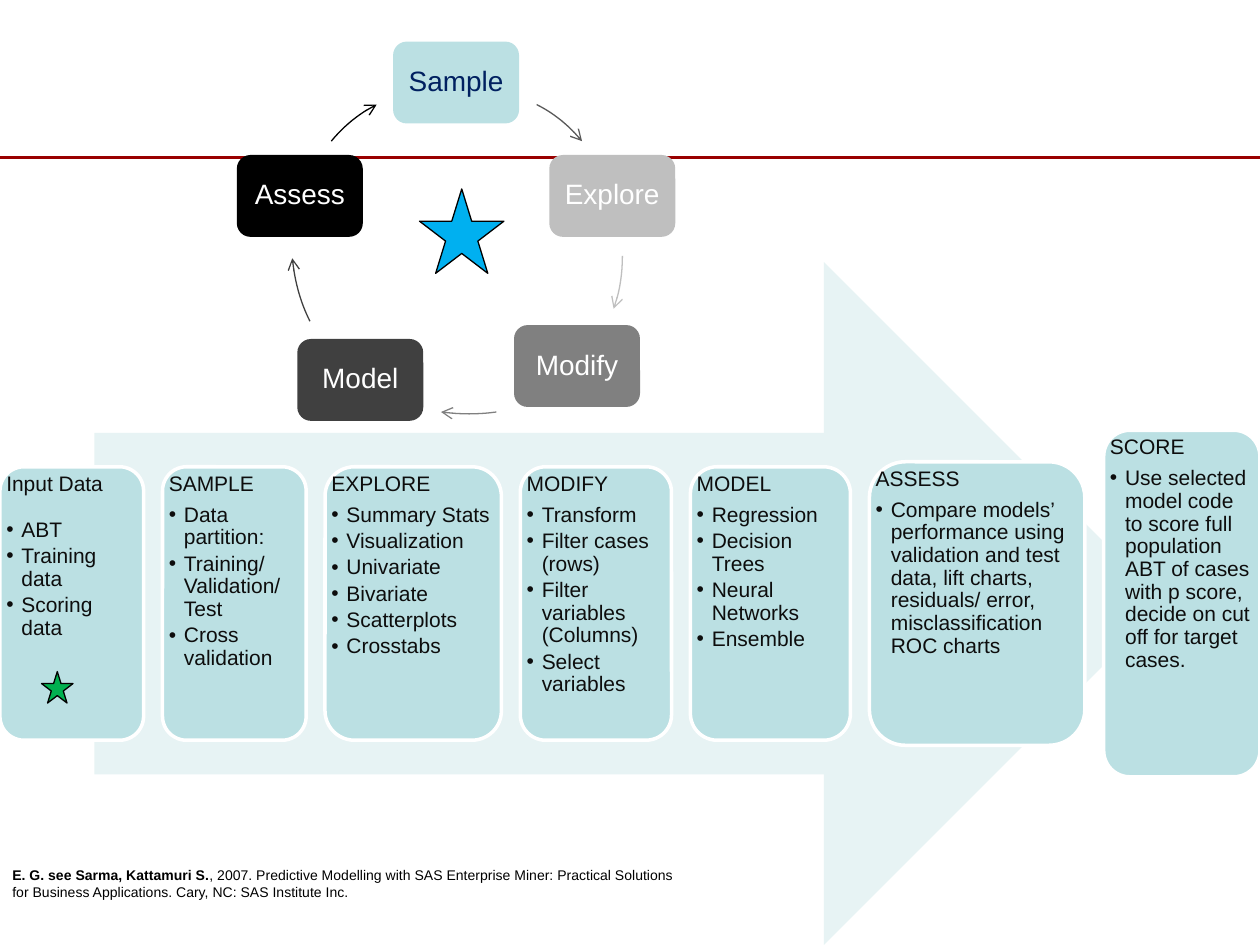
from lxml.etree import SubElement
from pptx import Presentation
from pptx.dml.color import RGBColor
from pptx.enum.shapes import MSO_CONNECTOR, MSO_SHAPE
from pptx.enum.text import MSO_ANCHOR, PP_ALIGN
from pptx.oxml.ns import qn
from pptx.util import Inches, Pt

BLACK = RGBColor(0x00, 0x00, 0x00)
WHITE = RGBColor(0xFF, 0xFF, 0xFF)
INK = RGBColor(0x0D, 0x0D, 0x0D)
NAVY = RGBColor(0x00, 0x20, 0x60)
TEAL = RGBColor(0xBB, 0xE0, 0xE3)
PALE_TEAL = RGBColor(0xE7, 0xF3, 0xF4)
RED = RGBColor(0x99, 0x00, 0x00)
BLUE = RGBColor(0x00, 0xB0, 0xF0)
GREEN = RGBColor(0x00, 0xB0, 0x50)
SLATE = RGBColor(0x59, 0x59, 0x59)
LIGHT_GRAY = RGBColor(0xBF, 0xBF, 0xBF)
MID_GRAY = RGBColor(0x80, 0x80, 0x80)
DARK_GRAY = RGBColor(0x40, 0x40, 0x40)
FONT = "Arial"

# Process stages: heading, width, height, bullets
STAGES = [
    ("Input Data", 1.14, 2.17, ["ABT", "Training data", "Scoring data"]),
    ("SAMPLE", 1.14, 2.17,
     ["Data partition:", "Training/ Validation/ Test", "Cross validation"]),
    ("EXPLORE", 1.40, 2.17,
     ["Summary Stats", "Visualization", "Univariate", "Bivariate",
      "Scatterplots", "Crosstabs"]),
    ("MODIFY", 1.20, 2.17,
     ["Transform", "Filter cases (rows)", "Filter variables (Columns)",
      "Select variables"]),
    ("MODEL", 1.27, 2.17,
     ["Regression", "Decision Trees", "Neural Networks", "Ensemble"]),
    ("ASSESS", 1.71, 2.25,
     ["Compare models’ performance using validation and test data, lift "
      "charts, residuals/ error, misclassification ROC charts"]),
    ("SCORE", 1.24, 2.75,
     ["Use selected model code to score full population ABT of cases with "
      "p score, decide on cut off for target cases."]),
]
STAGE_GAP = 0.15
STAGE_MIDDLE = 4.79

# Cycle steps: label, left, top, fill, text colour
CYCLE = [
    ("Sample", 3.12, 0.33, TEAL, NAVY),
    ("Explore", 4.36, 1.23, LIGHT_GRAY, WHITE),
    ("Modify", 4.08, 2.58, MID_GRAY, WHITE),
    ("Model", 2.36, 2.69, DARK_GRAY, WHITE),
    ("Assess", 1.88, 1.23, BLACK, WHITE),
]
# Curved arrows: start, two control points, end; then colour
CYCLE_ARROWS = [
    ([(4.26, 0.83), (4.40, 0.90), (4.52, 1.00), (4.62, 1.12)], SLATE),
    ([(4.94, 2.03), (4.94, 2.17), (4.92, 2.32), (4.87, 2.45)], LIGHT_GRAY),
    ([(3.94, 3.27), (3.80, 3.29), (3.65, 3.29), (3.50, 3.27)], MID_GRAY),
    ([(2.46, 2.55), (2.38, 2.39), (2.34, 2.23), (2.32, 2.05)], DARK_GRAY),
    ([(2.63, 1.12), (2.73, 1.00), (2.85, 0.90), (2.99, 0.83)], BLACK),
]
CURVE_STEPS = 12

# Stars: left, top, size, fill
STARS = [(3.33, 1.50, 0.67, BLUE), (0.33, 5.33, 0.25, GREEN)]

CITATION = [
    ("E. G. see Sarma, Kattamuri S.", True),
    (", 2007. Predictive Modelling with SAS Enterprise Miner: Practical "
     "Solutions for Business Applications. Cary, NC: SAS Institute Inc.", False),
]

prs = Presentation()
prs.slide_width, prs.slide_height = Inches(10), Inches(7.5)
slide = prs.slides.add_slide(prs.slide_layouts[6])
shapes = slide.shapes


def add_block(preset, left, top, width, height, fill, outline=None, weight=0.75):
    block = shapes.add_shape(preset, *map(Inches, (left, top, width, height)))
    block.shadow.inherit = False
    block.fill.solid()
    block.fill.fore_color.rgb = fill
    if outline is None:
        block.line.fill.background()
    else:
        block.line.color.rgb = outline
        block.line.width = Pt(weight)
    return block


def set_insets(frame, inset):
    frame.margin_left = frame.margin_right = Inches(inset)
    frame.margin_top = frame.margin_bottom = Inches(inset)


def add_text(paragraph, text, size, color, bold=False):
    run = paragraph.add_run()
    run.text = text
    run.font.name, run.font.size, run.font.bold = FONT, Pt(size), bold
    run.font.color.rgb = color


def add_bullet(paragraph):
    properties = paragraph._p.get_or_add_pPr()
    properties.set("marL", str(Inches(0.12)))
    properties.set("indent", str(-Inches(0.12)))
    SubElement(properties, qn("a:buFont"), typeface=FONT)
    SubElement(properties, qn("a:buChar"), char="•")


def add_curved_arrow(controls, color):
    (x0, y0), (x1, y1), (x2, y2), (x3, y3) = controls
    points = []
    for step in range(CURVE_STEPS + 1):
        t = step / CURVE_STEPS
        u = 1 - t
        a, b, c, d = u**3, 3 * u * u * t, 3 * u * t * t, t**3
        points.append((Inches(a * x0 + b * x1 + c * x2 + d * x3),
                       Inches(a * y0 + b * y1 + c * y2 + d * y3)))
    builder = shapes.build_freeform(*points[0])
    builder.add_line_segments(points[1:], close=False)
    arrow = builder.convert_to_shape()
    arrow.shadow.inherit = False
    arrow.fill.background()
    arrow.line.color.rgb = color
    arrow.line.width = Pt(0.75)
    SubElement(arrow.line._get_or_add_ln(), qn("a:tailEnd"), type="arrow")


# Header rule and background arrow
rule = shapes.add_connector(MSO_CONNECTOR.STRAIGHT, 0, Inches(1.25),
                            prs.slide_width, Inches(1.25))
rule.line.color.rgb = RED
rule.line.width = Pt(2.25)
SubElement(rule._element.spPr, qn("a:effectLst"))
add_block(MSO_SHAPE.RIGHT_ARROW, 0.75, 2.08, 8.5, 5.42, PALE_TEAL)

# Process stages, centred on the arrow
left = 0
for heading, width, height, bullets in STAGES:
    top = STAGE_MIDDLE - height / 2
    add_block(MSO_SHAPE.ROUNDED_RECTANGLE, left, top, width, height, TEAL, WHITE, 2)
    stage = shapes.add_textbox(*map(Inches, (left, top, width, height))).text_frame
    stage.word_wrap = True
    set_insets(stage, 0.05)
    title = stage.paragraphs[0]
    title.line_spacing, title.space_after = 0.9, Pt(4.8)
    add_text(title, heading, 12, INK)
    for index, bullet in enumerate(bullets):
        item = stage.add_paragraph()
        item.level = 1
        item.line_spacing, item.space_after = 0.9, Pt(2.1)
        if heading == "Input Data" and index == 0:
            item.space_before = Pt(8.5)
        add_bullet(item)
        add_text(item, bullet, 12, INK)
    left += width + STAGE_GAP

# Cycle of steps
for label, left, top, fill, color in CYCLE:
    step = add_block(MSO_SHAPE.ROUNDED_RECTANGLE, left, top, 1, 0.65, fill).text_frame
    step.word_wrap = True
    step.vertical_anchor = MSO_ANCHOR.MIDDLE
    set_insets(step, 0.02)
    step.paragraphs[0].alignment = PP_ALIGN.CENTER
    step.paragraphs[0].line_spacing = 0.9
    add_text(step.paragraphs[0], label, 16, color)
for controls, color in CYCLE_ARROWS:
    add_curved_arrow(controls, color)

# Citation
citation = shapes.add_textbox(0, Inches(6.83), Inches(5.5), Inches(0.67)).text_frame
citation.word_wrap = True
for text, bold in CITATION:
    add_text(citation.paragraphs[0], text, 8, BLACK, bold)

# Stars
for left, top, size, fill in STARS:
    add_block(MSO_SHAPE.STAR_5_POINT, left, top, size, size, fill, BLACK)

prs.save("out.pptx")
